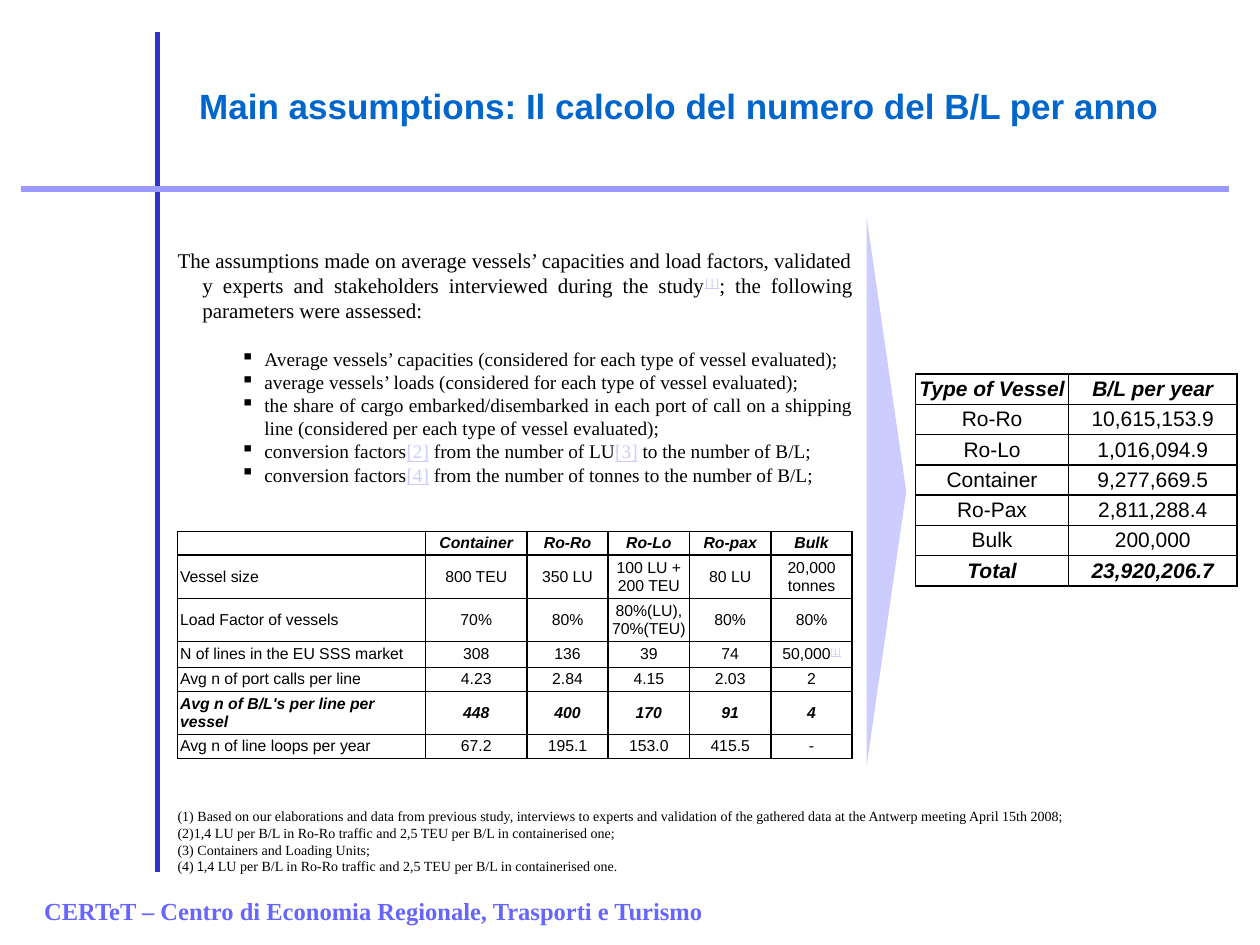
from lxml.etree import SubElement
from pptx import Presentation
from pptx.dml.color import RGBColor
from pptx.enum.shapes import MSO_CONNECTOR, MSO_SHAPE
from pptx.enum.text import MSO_ANCHOR as ANCHOR, MSO_AUTO_SIZE, PP_ALIGN as ALIGN
from pptx.oxml.ns import qn
from pptx.util import Cm, Pt

BLACK = RGBColor(0x00, 0x00, 0x00)
TITLE_BLUE = RGBColor(0x00, 0x66, 0xCC)
DARK_BLUE = RGBColor(0x33, 0x33, 0xCC)
PERIWINKLE = RGBColor(0x99, 0x99, 0xFF)
FOOTER_BLUE = RGBColor(0x66, 0x66, 0xFF)
PALE_BLUE = RGBColor(0xCC, 0xCC, 0xFF)
SERIF = "Times New Roman"


def write(para, *texts, size, name=SERIF, color=BLACK, bold=False, italic=False, align=ALIGN.LEFT):
    para.alignment = align
    for text in texts:
        span = para.add_run()
        span.text = text
        font = span.font
        font.size, font.name, font.bold, font.italic = Pt(size), name, bold, italic
        is_note = text.startswith("[")
        font.color.rgb = PALE_BLUE if is_note else color
        if is_note:
            font.underline = True
        if text == "[1]":
            span._r.get_or_add_rPr().set("baseline", "30000")


deck = Presentation()
deck.slide_width, deck.slide_height = Cm(25.4), Cm(19.05)
page = deck.slides.add_slide(deck.slide_layouts[5])
shapes = page.shapes

title = shapes.title
title.left, title.top, title.width, title.height = Cm(3.76), Cm(1.57), Cm(20), Cm(1.12)
frame = title.text_frame
frame.word_wrap = False
frame.auto_size = MSO_AUTO_SIZE.NONE
frame.vertical_anchor = ANCHOR.TOP
write(frame.paragraphs[0], "Main assumptions: Il calcolo del numero del B/L per anno",
      size=20, name="Arial", color=TITLE_BLUE, bold=True)

rules = [
    (3.18, 0.64, 3.18, 17.58, DARK_BLUE),
    (0.43, 3.81, 24.77, 3.81, PERIWINKLE),
]
for x1, y1, x2, y2, color in rules:
    rule = shapes.add_connector(MSO_CONNECTOR.STRAIGHT, Cm(x1), Cm(y1), Cm(x2), Cm(y2))
    rule.line.color.rgb = color
    rule.line.width = Pt(3)
    SubElement(rule._element.spPr, qn("a:effectLst"))

footer = shapes.add_textbox(Cm(0.64), Cm(17.58), Cm(20.32), Cm(1.27)).text_frame
footer.word_wrap = True
footer.vertical_anchor = ANCHOR.BOTTOM
footer.margin_bottom = Cm(0.2)
write(footer.paragraphs[0], "CERTeT – Centro di Economia Regionale, Trasporti e Turismo",
      size=14, color=FOOTER_BLUE, bold=True)

arrow = shapes.add_shape(MSO_SHAPE.PENTAGON, Cm(17.47), Cm(4.37), Cm(0.8), Cm(11.08))
arrow.adjustments[0] = 1
arrow.shadow.inherit = False
arrow.fill.solid()
arrow.fill.fore_color.rgb = PALE_BLUE
arrow.line.fill.background()

parameter_rows = [
    ["", "Container", "Ro-Ro", "Ro-Lo", "Ro-pax", "Bulk"],
    ["Vessel size", "800 TEU", "350 LU", "100 LU + 200 TEU", "80 LU", "20,000 tonnes"],
    ["Load Factor of vessels", "70%", "80%", "80%(LU), 70%(TEU)", "80%", "80%"],
    ["N of lines in the EU SSS market", "308", "136", "39", "74", ("50,000", "[1]")],
    ["Avg n of port calls per line", "4.23", "2.84", "4.15", "2.03", "2"],
    ["Avg n of B/L's per line per vessel", "448", "400", "170", "91", "4"],
    ["Avg n of line loops per year", "67.2", "195.1", "153.0", "415.5", "-"],
]
yearly_rows = [
    ["Type of Vessel", "B/L per year"],
    ["Ro-Ro", "10,615,153.9"],
    ["Ro-Lo", "1,016,094.9"],
    ["Container", "9,277,669.5"],
    ["Ro-Pax", "2,811,288.4"],
    ["Bulk", "200,000"],
    ["Total", "23,920,206.7"],
]
tables = [
    (parameter_rows, 3.58, 10.71, [5, 2.04] + [1.64] * 4,
     [0.48, 0.87, 0.87, 0.52, 0.48, 0.87, 0.48], 9, (0, 5), ALIGN.LEFT),
    (yearly_rows, 18.46, 7.54, [3.08, 3.4], [0.61] * 7, 12, (0, 6), ALIGN.CENTER),
]
for rows, left, top, widths, heights, size, strong_rows, first_align in tables:
    table = shapes.add_table(len(rows), len(widths), Cm(left), Cm(top),
                             Cm(sum(widths)), Cm(sum(heights))).table
    table.first_row = table.horz_banding = False
    for column, width in zip(table.columns, widths):
        column.width = Cm(width)
    for r, (row, height) in enumerate(zip(rows, heights)):
        table.rows[r].height = Cm(height)
        for c, text in enumerate(row):
            cell = table.cell(r, c)
            cell.margin_left = cell.margin_right = cell.margin_top = cell.margin_bottom = Cm(0.05)
            cell.vertical_anchor = ANCHOR.MIDDLE
            for side in ("a:lnL", "a:lnR", "a:lnT", "a:lnB"):
                border = SubElement(cell._tc.get_or_add_tcPr(), qn(side), w=str(Pt(1)))
                SubElement(SubElement(border, qn("a:solidFill")), qn("a:srgbClr"), val=str(BLACK))
            cell.fill.background()
            para = cell.text_frame.paragraphs[0]
            if not text:
                SubElement(para._p, qn("a:endParaRPr"), sz=str(size * 100))
                continue
            spans = text if isinstance(text, tuple) else (text,)
            strong = r in strong_rows
            write(para, *spans, size=size, name="Arial", bold=strong, italic=strong,
                  align=first_align if c == 0 else ALIGN.CENTER)

body = shapes.add_textbox(Cm(3.58), Cm(4.95), Cm(13.61), Cm(4.88)).text_frame
body.word_wrap = True
notes = shapes.add_textbox(Cm(3.58), Cm(16.28), Cm(19.76), Cm(1.35)).text_frame
notes.word_wrap = False
for frame in (body, notes):
    frame.margin_left = frame.margin_right = frame.margin_top = frame.margin_bottom = 0
    frame.vertical_anchor = ANCHOR.MIDDLE

intro = body.paragraphs[0]
intro._p.get_or_add_pPr().set("marL", str(Cm(0.5)))
intro._p.get_or_add_pPr().set("indent", str(Cm(-0.5)))
write(intro, "The assumptions made on average vessels’ capacities and load factors, validated "
      "y experts and stakeholders interviewed during the study", "[1]",
      "; the following parameters were assessed:", size=12, align=ALIGN.JUSTIFY)

bullets = [
    ["Average vessels’ capacities (considered for each type of vessel evaluated);"],
    ["average vessels’ loads (considered for each type of vessel evaluated);"],
    ["the share of cargo embarked/disembarked in each port of call on a shipping line "
     "(considered per each type of vessel evaluated);"],
    ["conversion factors", "[2]", " from the number of LU", "[3]", " to the number of B/L;"],
    ["conversion factors", "[4]", " from the number of tonnes to the number of B/L;"],
]
for i, spans in enumerate(bullets):
    para = body.add_paragraph()
    para.level = 1
    properties = para._p.get_or_add_pPr()
    properties.set("marL", str(Cm(1.75)))
    properties.set("indent", str(Cm(-0.48)))
    SubElement(properties, qn("a:buChar"), char="▪")
    if i == 0:
        para.space_before = Pt(14)
    write(para, *spans, size=11, align=ALIGN.JUSTIFY)

footnotes = [
    "(1) Based on our elaborations and data from previous study, interviews to experts and "
    "validation of the gathered data at the Antwerp meeting April 15th 2008;",
    "(2)1,4 LU per B/L in Ro-Ro traffic and 2,5 TEU per B/L in containerised one;",
    "(3) Containers and Loading Units;",
]
for i, text in enumerate(footnotes):
    para = notes.add_paragraph() if i else notes.paragraphs[0]
    write(para, text, size=8, align=ALIGN.JUSTIFY)
para = notes.add_paragraph()
write(para, "(4) ", size=8, align=ALIGN.JUSTIFY)
write(para, "1", size=8, name="Arial Narrow", align=ALIGN.JUSTIFY)
write(para, ",4 LU per B/L in Ro-Ro traffic and 2,5 TEU per B/L in containerised one.",
      size=8, align=ALIGN.JUSTIFY)

deck.save("out.pptx")
